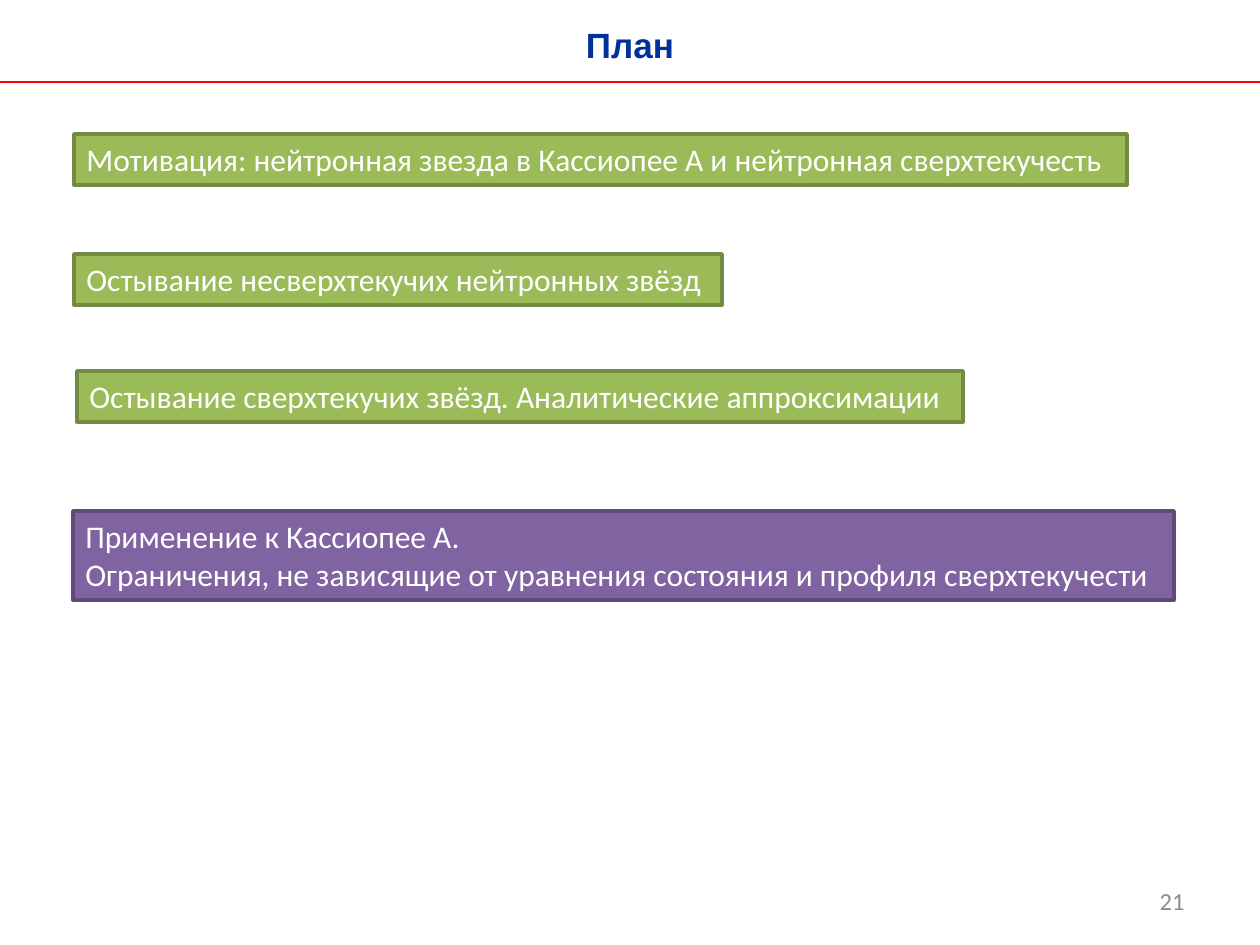
from dataclasses import dataclass

from lxml.etree import SubElement
from pptx import Presentation
from pptx.dml.color import RGBColor
from pptx.enum.shapes import MSO_CONNECTOR, MSO_SHAPE
from pptx.enum.text import MSO_ANCHOR, MSO_AUTO_SIZE, PP_ALIGN
from pptx.oxml.ns import qn
from pptx.util import Emu, Pt

PIXELS_PER_INCH = 126


def px(length):
    return Emu(round(length * 914400 / PIXELS_PER_INCH))


@dataclass(frozen=True)
class Theme:
    heading_font: str = "Arial"
    body_font: str = "Calibri"
    heading_size: int = 20
    body_size: int = 18
    number_size: int = 14
    heading: str = "003399"
    rule: str = "FF0000"
    number: str = "8C8C8C"
    box_text: str = "FFFFFF"
    done: tuple = ("9BBB59", "738A42")
    current: tuple = ("8064A2", "5F4A78")
    rule_width: float = 0.75
    border_width: float = 2


class SlideBuilder:
    def __init__(self, slide, theme):
        self.slide = slide
        self.theme = theme

    def set_text(self, shape, text, size, color, font, align=PP_ALIGN.LEFT, bold=False):
        shape.text_frame.text = text
        for paragraph in shape.text_frame.paragraphs:
            paragraph.alignment = align
            for run in paragraph.runs:
                run.font.name = font
                run.font.size = Pt(size)
                run.font.bold = bold
                run.font.color.rgb = RGBColor.from_string(color)

    def text(self, left, top, width, height, text, size, color, font, align,
             anchor=MSO_ANCHOR.TOP, bold=False):
        shape = self.slide.shapes.add_textbox(px(left), px(top), px(width), px(height))
        shape.text_frame.word_wrap = True
        shape.text_frame.vertical_anchor = anchor
        self.set_text(shape, text, size, color, font, align, bold)

    def rule(self, left, top, width):
        line = self.slide.shapes.add_connector(
            MSO_CONNECTOR.STRAIGHT, px(left), px(top), px(left + width), px(top))
        line.line.color.rgb = RGBColor.from_string(self.theme.rule)
        line.line.width = Pt(self.theme.rule_width)
        SubElement(line._element.spPr, qn("a:effectLst"))

    def box(self, left, top, width, height, text, colors):
        shape = self.slide.shapes.add_shape(
            MSO_SHAPE.RECTANGLE, px(left), px(top), px(width), px(height))
        fill, border = colors
        shape.shadow.inherit = False
        shape.fill.solid()
        shape.fill.fore_color.rgb = RGBColor.from_string(fill)
        shape.line.color.rgb = RGBColor.from_string(border)
        shape.line.width = Pt(self.theme.border_width)
        frame = shape.text_frame
        frame.word_wrap = False
        frame.auto_size = MSO_AUTO_SIZE.SHAPE_TO_FIT_TEXT
        frame.vertical_anchor = MSO_ANCHOR.TOP
        self.set_text(shape, text, self.theme.body_size, self.theme.box_text,
                      self.theme.body_font)


def main():
    theme = Theme()
    presentation = Presentation()
    presentation.slide_width = px(1260)
    presentation.slide_height = px(945)
    slide = presentation.slides.add_slide(presentation.slide_layouts[6])
    builder = SlideBuilder(slide, theme)

    builder.text(0, 17, 1260, 54, "План", theme.heading_size, theme.heading,
                 theme.heading_font, PP_ALIGN.CENTER, bold=True)
    builder.rule(0, 82, 1260)
    builder.text(903, 876, 294, 50, "21", theme.number_size, theme.number,
                 theme.body_font, PP_ALIGN.RIGHT, MSO_ANCHOR.MIDDLE)

    topics = [
        (74, 134, 1053, 51, theme.done,
         "Мотивация: нейтронная звезда в Кассиопее А и нейтронная сверхтекучесть"),
        (74, 254, 648, 51, theme.done, "Остывание несверхтекучих нейтронных звёзд"),
        (77, 371, 886, 51, theme.done,
         "Остывание сверхтекучих звёзд. Аналитические аппроксимации"),
        (73, 511, 1101, 89, theme.current,
         "Применение к Кассиопее А.\n"
         "Ограничения, не зависящие от уравнения состояния и профиля сверхтекучести"),
    ]
    for left, top, width, height, colors, text in topics:
        builder.box(left, top, width, height, text, colors)

    presentation.save("out.pptx")


if __name__ == "__main__":
    main()
